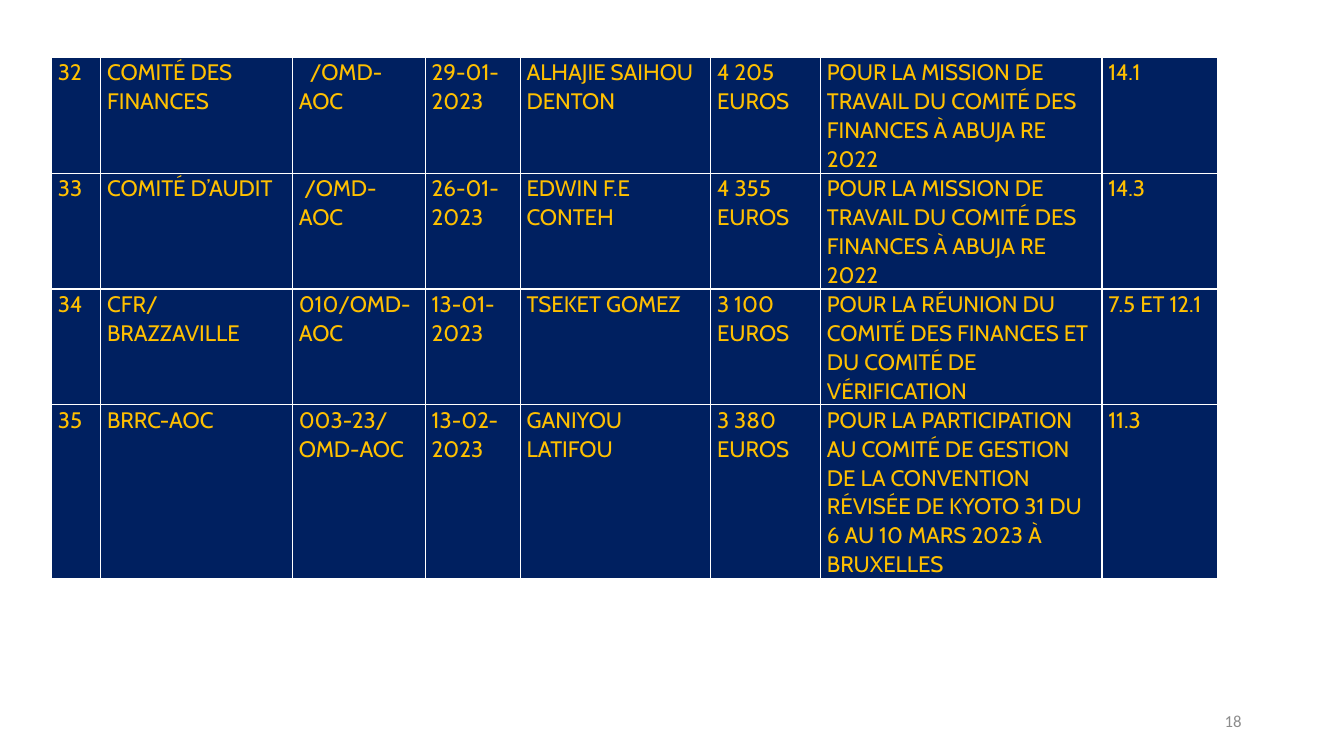
from dataclasses import dataclass

from lxml import etree
from pptx import Presentation
from pptx.dml.color import RGBColor
from pptx.enum.text import MSO_ANCHOR, PP_ALIGN
from pptx.oxml.ns import qn
from pptx.util import Cm, Pt

MIDDLE = MSO_ANCHOR.MIDDLE
RIGHT = PP_ALIGN.RIGHT


@dataclass(frozen=True)
class Theme:
    navy: str = "002060"
    gold: str = "FFC000"
    white: str = "FFFFFF"
    grey: str = "8C8C8C"
    table_font: str = "Cabin"
    number_font: str = "Calibri"
    table_size: int = 16
    number_size: int = 12
    rule_width: int = 1
    line_spacing: float = 1.07


THEME = Theme()
COLUMN_WIDTHS = (1.24, 4.83, 3.35, 2.39, 4.8, 2.77, 7.09, 2.92)
ROW_HEIGHTS = (2.79, 2.79, 2.79, 3.73)
CELL_MARGINS = {
    "margin_left": Cm(0.16),
    "margin_right": Cm(0.16),
    "margin_top": 0,
    "margin_bottom": 0,
}
REFERENCE_INDENTS = {(0, 2): 0.28, (1, 2): 0.14}
MISSIONS = (
    ("32", "COMITÉ DES FINANCES", "/OMD-AOC", "29-01-2023",
     "ALHAJIE SAIHOU DENTON", "4 205 EUROS",
     "POUR LA MISSION DE TRAVAIL DU COMITÉ DES FINANCES À ABUJA RE 2022",
     "14.1"),
    ("33", "COMITÉ D’AUDIT", "/OMD-AOC", "26-01-2023",
     "EDWIN F.E CONTEH", "4 355 EUROS",
     "POUR LA MISSION DE TRAVAIL DU COMITÉ DES FINANCES À ABUJA RE 2022",
     "14.3"),
    ("34", "CFR/BRAZZAVILLE", "010/OMD-AOC", "13-01-2023",
     "TSEKET GOMEZ", "3 100 EUROS",
     "POUR LA RÉUNION DU COMITÉ DES FINANCES ET DU COMITÉ DE VÉRIFICATION",
     "7.5 ET 12.1"),
    ("35", "BRRC-AOC", "003-23/OMD-AOC", "13-02-2023",
     "GANIYOU LATIFOU", "3 380 EUROS",
     "POUR LA PARTICIPATION AU COMITÉ DE GESTION DE LA CONVENTION RÉVISÉE "
     "DE KYOTO 31 DU 6 AU 10 MARS 2023 À BRUXELLES",
     "11.3"),
)


def write(paragraph, text, font, size, color):
    run = paragraph.add_run()
    run.text = text
    run.font.name = font
    run.font.size = Pt(size)
    run.font.color.rgb = RGBColor.from_string(color)


def rule_cell(cell):
    properties = cell._tc.get_or_add_tcPr()
    for side in ("lnL", "lnR", "lnT", "lnB"):
        rule = etree.SubElement(properties, qn(f"a:{side}"), w=str(Pt(THEME.rule_width)))
        fill = etree.SubElement(rule, qn("a:solidFill"))
        etree.SubElement(fill, qn("a:srgbClr"), val=THEME.white)


def fill_cell(cell, text, indent):
    for attribute, value in CELL_MARGINS.items():
        setattr(cell, attribute, value)
    rule_cell(cell)
    cell.fill.solid()
    cell.fill.fore_color.rgb = RGBColor.from_string(THEME.navy)
    paragraph = cell.text_frame.paragraphs[0]
    paragraph.line_spacing = THEME.line_spacing
    if indent:
        paragraph._p.get_or_add_pPr().set("indent", str(Cm(indent)))
    write(paragraph, text, THEME.table_font, THEME.table_size, THEME.gold)


def add_missions(slide, left, top):
    missions = slide.shapes.add_table(
        len(MISSIONS), len(COLUMN_WIDTHS), Cm(left), Cm(top),
        Cm(sum(COLUMN_WIDTHS)), Cm(sum(ROW_HEIGHTS)),
    ).table
    missions.first_row = False
    missions.horz_banding = False
    for column, width in zip(missions.columns, COLUMN_WIDTHS):
        column.width = Cm(width)
    for row, height in zip(missions.rows, ROW_HEIGHTS):
        row.height = Cm(height)
    for r, mission in enumerate(MISSIONS):
        for c, text in enumerate(mission):
            fill_cell(missions.cell(r, c), text, REFERENCE_INDENTS.get((r, c)))


def add_page_number(slide, left, top, width, height):
    frame = slide.shapes.add_textbox(Cm(left), Cm(top), Cm(width), Cm(height)).text_frame
    frame.word_wrap = True
    frame.vertical_anchor = MIDDLE
    paragraph = frame.paragraphs[0]
    paragraph.alignment = RIGHT
    write(paragraph, "18", THEME.number_font, THEME.number_size, THEME.grey)


def main():
    deck = Presentation()
    deck.slide_width = Cm(33.87)
    deck.slide_height = Cm(19.05)
    slide = deck.slides.add_slide(deck.slide_layouts[6])
    add_missions(slide, 1.3, 1.45)
    add_page_number(slide, 23.92, 17.66, 7.62, 1.01)
    deck.save("out.pptx")


if __name__ == "__main__":
    main()
